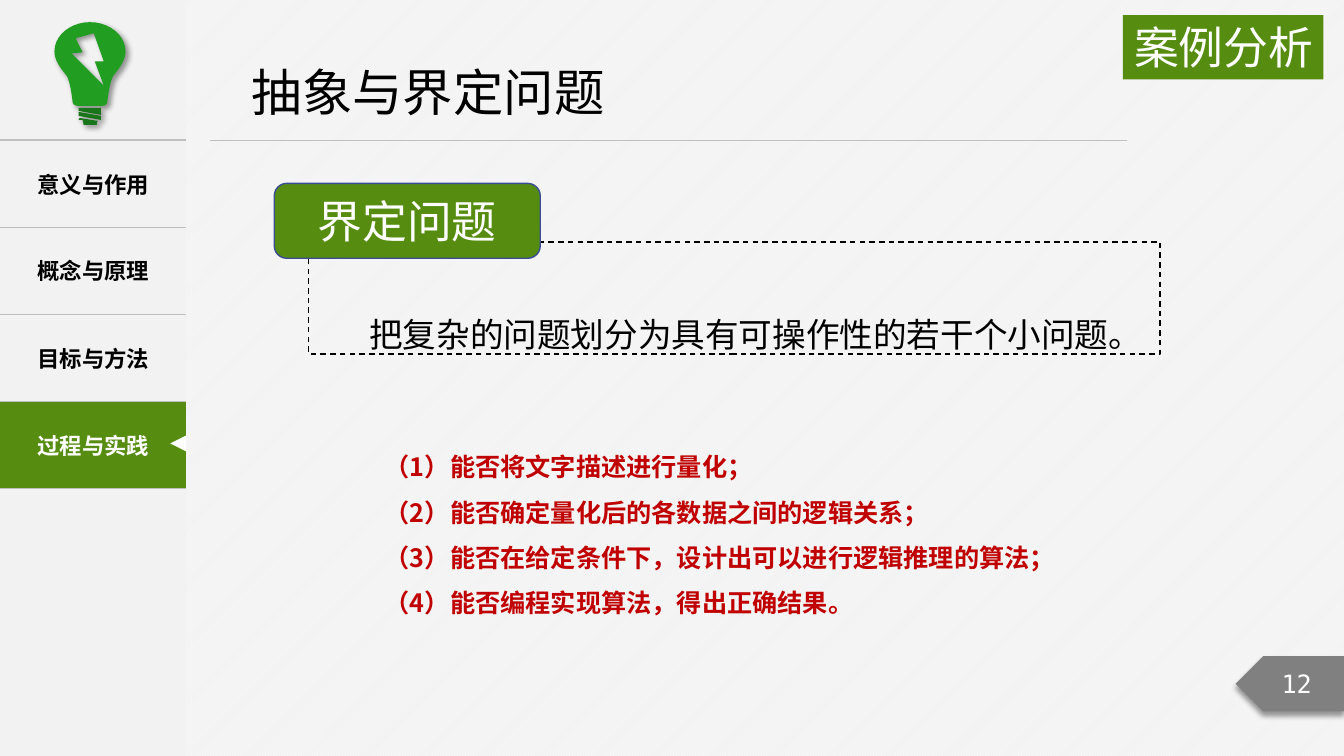
from lxml import etree
from pptx import Presentation
from pptx.dml.color import RGBColor
from pptx.enum.dml import MSO_LINE, MSO_PATTERN
from pptx.enum.shapes import MSO_CONNECTOR, MSO_SHAPE
from pptx.enum.text import MSO_ANCHOR, PP_ALIGN
from pptx.oxml.ns import qn
from pptx.util import Pt

LEFT, CENTER, RIGHT = PP_ALIGN.LEFT, PP_ALIGN.CENTER, PP_ALIGN.RIGHT
TOP, MIDDLE, BOTTOM = MSO_ANCHOR.TOP, MSO_ANCHOR.MIDDLE, MSO_ANCHOR.BOTTOM
RECT, ROUND = MSO_SHAPE.RECTANGLE, MSO_SHAPE.ROUNDED_RECTANGLE
PLATE, TRIANGLE = MSO_SHAPE.PENTAGON, MSO_SHAPE.ISOSCELES_TRIANGLE
DASH = MSO_LINE.DASH
STRAIGHT = MSO_CONNECTOR.STRAIGHT
STRIPES = MSO_PATTERN.LIGHT_UPWARD_DIAGONAL

SANS, MONO = "Noto Sans CJK SC", "DejaVu Sans Mono"
COLORS = {
    "paper": "F2F2F2", "white": "FFFFFF", "black": "000000", "rule": "BFBFBF",
    "green": "568D11", "bulb": "219E21", "socket": "197519", "gray": "808080",
    "edge": "3A4C94", "red": "C00000",
}


def rgb(name):
    return RGBColor.from_string(COLORS[name])


def put_text(tf, text, size=16, color="black", bold=False, font=SANS,
             align=LEFT, spacing=None):
    for i, line in enumerate(text.split("\n")):
        p = tf.paragraphs[0] if i == 0 else tf.add_paragraph()
        p.alignment = align
        if spacing:
            p.line_spacing = spacing
        r = p.add_run()
        r.text = line
        r.font.size, r.font.bold, r.font.name = Pt(size), bold, font
        r.font.color.rgb = rgb(color)
        etree.SubElement(r.font._element, qn("a:ea"), typeface=font)


def bezier(start, c1, c2, end, steps=10):
    points = []
    for i in range(1, steps + 1):
        t = i / steps
        weights = (1 - t) ** 3, 3 * t * (1 - t) ** 2, 3 * t * t * (1 - t), t ** 3
        points.append(tuple(sum(w * q[k] for w, q in zip(weights, (start, c1, c2, end)))
                            for k in (0, 1)))
    return points


class Deck:
    def __init__(self, prs):
        self.slide = prs.slides.add_slide(prs.slide_layouts[6])
        self.shapes = self.slide.shapes

    def background(self, fore, back):
        fill = self.slide.background.fill
        fill.patterned()
        fill.pattern = STRIPES
        fill.fore_color.rgb, fill.back_color.rgb = rgb(fore), rgb(back)

    def paint(self, sp, fill=None, line=None, dash=None):
        sp.shadow.inherit = False
        if fill:
            sp.fill.solid()
            sp.fill.fore_color.rgb = rgb(fill)
        else:
            sp.fill.background()
        if line:
            sp.line.color.rgb, sp.line.width = rgb(line), Pt(1)
            if dash:
                sp.line.dash_style = dash
        else:
            sp.line.fill.background()

    def shadow(self, sp, angle):
        effects = sp._element.spPr.find(qn("a:effectLst"))
        outer = etree.SubElement(effects, qn("a:outerShdw"), blurRad=str(Pt(4)),
                                 dist=str(Pt(3)), dir=str(angle * 60000),
                                 algn="t", rotWithShape="0")
        tint = etree.SubElement(outer, qn("a:srgbClr"), val=COLORS["black"])
        etree.SubElement(tint, qn("a:alpha"), val="40000")

    def box(self, kind, at, text=None, fill=None, line=None, dash=None,
            anchor=MIDDLE, insets=(7.2, 3.6, 7.2, 3.6), **fmt):
        at = [Pt(v) for v in at]
        sp = self.shapes.add_shape(kind, *at) if kind else self.shapes.add_textbox(*at)
        if kind:
            self.paint(sp, fill, line, dash)
        if text:
            tf = sp.text_frame
            tf.word_wrap, tf.vertical_anchor = True, anchor
            (tf.margin_left, tf.margin_top,
             tf.margin_right, tf.margin_bottom) = [Pt(v) for v in insets]
            put_text(tf, text, **fmt)
        return sp

    def rule(self, x1, x2, y):
        line = self.shapes.add_connector(STRAIGHT, Pt(x1), Pt(y), Pt(x2), Pt(y))
        line.line.color.rgb, line.line.width = rgb("rule"), Pt(0.5)
        etree.SubElement(line._element.spPr, qn("a:effectLst"))

    def outline(self, contours, fill):
        """Filled contours, given in hundredths of an inch (0.72 pt)."""
        contours = [[(Pt(x * 0.72), Pt(y * 0.72)) for x, y in c] for c in contours]
        builder = self.shapes.build_freeform(*contours[0][0])
        for i, points in enumerate(contours):
            if i:
                builder.move_to(*points[0])
            builder.add_line_segments(points[1:], close=True)
        sp = builder.convert_to_shape()
        self.paint(sp, fill)
        self.shadow(sp, 45)

    def menu(self, at, items):
        """One-column table; each item is (text, text colour, fill)."""
        frame = self.shapes.add_table(len(items), 1, *[Pt(v) for v in at])
        table = frame.table
        table.first_row = table.horz_banding = False
        for i, (text, color, fill) in enumerate(items):
            cell = table.cell(i, 0)
            cell.vertical_anchor = MIDDLE
            tc_pr = cell._tc.get_or_add_tcPr()
            for side in ("lnL", "lnR"):
                etree.SubElement(etree.SubElement(tc_pr, qn("a:" + side)), qn("a:noFill"))
            for side in ("lnT", "lnB"):
                ln = etree.SubElement(tc_pr, qn("a:" + side), w=str(Pt(1)))
                solid = etree.SubElement(ln, qn("a:solidFill"))
                etree.SubElement(solid, qn("a:srgbClr"), val=COLORS["rule"])
            if fill:
                cell.fill.solid()
                cell.fill.fore_color.rgb = rgb(fill)
            else:
                cell.fill.background()
            if text:
                put_text(cell.text_frame, text, color=color, bold=True, align=CENTER)


def main():
    prs = Presentation()
    prs.slide_width, prs.slide_height = Pt(960), Pt(540)
    deck = Deck(prs)
    deck.background("white", "paper")

    # Sidebar menu
    deck.box(RECT, (0, 0, 133.2, 540), fill="paper")
    deck.menu((0, 100, 133.2, 249.2), [
        ("意义与作用", "black", None),
        (None, "black", None),
        ("目标与方法", "black", "paper"),
        ("过程与实践", "white", "green"),
    ])
    deck.box(RECT, (0, 162.9, 133.2, 60.3), "概念与原理", fill="paper",
             bold=True, align=CENTER)

    # Header rule, page number, active-item marker and section label
    deck.rule(150.3, 805, 100)
    plate = deck.box(PLATE, (882.6, 468.6, 77.4, 39.6), "12", fill="gray", size=18,
                     color="white", font=MONO, align=CENTER)
    plate._element.spPr.xfrm.set("flipH", "1")
    deck.shadow(plate, 90)
    marker = deck.box(TRIANGLE, (121.7, 311, 11.5, 11.5), fill="white")
    marker.rotation = 270
    deck.box(RECT, (802, 10.8, 143.3, 46), "案例分析", fill="green", anchor=TOP,
             size=32, color="white", align=RIGHT)

    # Light bulb: left half mirrored about its axis, with a bolt cut out
    axis = 89.25
    half = [(axis, 22)]
    for curve in [((70, 22), (54, 35), (54, 51)), ((54, 61), (62, 70), (66, 75)),
                  ((70, 81), (72, 101), (72, 101)), ((72, 103), (74, 105), (77, 105))]:
        half += bezier(half[-1], *curve)
    glass = half + [(2 * axis - x, y) for x, y in reversed(half[1:])]
    bolt = [(71, 53), (82, 52), (75, 38), (93, 33), (103, 61), (94, 61), (103, 85)]
    deck.outline([glass, bolt], "bulb")
    for thread in [
        [(78, 107), (100, 107), (100, 114), (78, 110)],
        [(100, 119), (100, 115), (78, 111), (78, 115)],
        [(79, 117), (97, 120), (96, 122), (96, 124), (83, 124), (82, 119), (78, 119)],
    ]:
        deck.outline([thread], "socket")

    # Title and definition
    deck.box(None, (172.8, 40.3, 304.6, 51), "抽象与界定问题", anchor=TOP, size=36)
    deck.box(RECT, (220.3, 172.8, 608.4, 80), "把复杂的问题划分为具有可操作性的若干个小问题。",
             line="black", dash=DASH, anchor=BOTTOM, insets=(43.5, 0, 0, 0),
             size=24, spacing=1.5)
    deck.box(ROUND, (195.9, 131, 190, 53.5), "界定问题", fill="green", line="edge",
             size=32, color="white", align=CENTER)

    # Guiding questions
    deck.box(None, (267.8, 308.2, 480.2, 134.6),
             "（1）能否将文字描述进行量化；\n"
             "（2）能否确定量化后的各数据之间的逻辑关系；\n"
             "（3）能否在给定条件下，设计出可以进行逻辑推理的算法；\n"
             "（4）能否编程实现算法，得出正确结果。",
             anchor=TOP, size=18, color="red", bold=True, spacing=1.5)

    prs.save("out.pptx")


if __name__ == "__main__":
    main()
